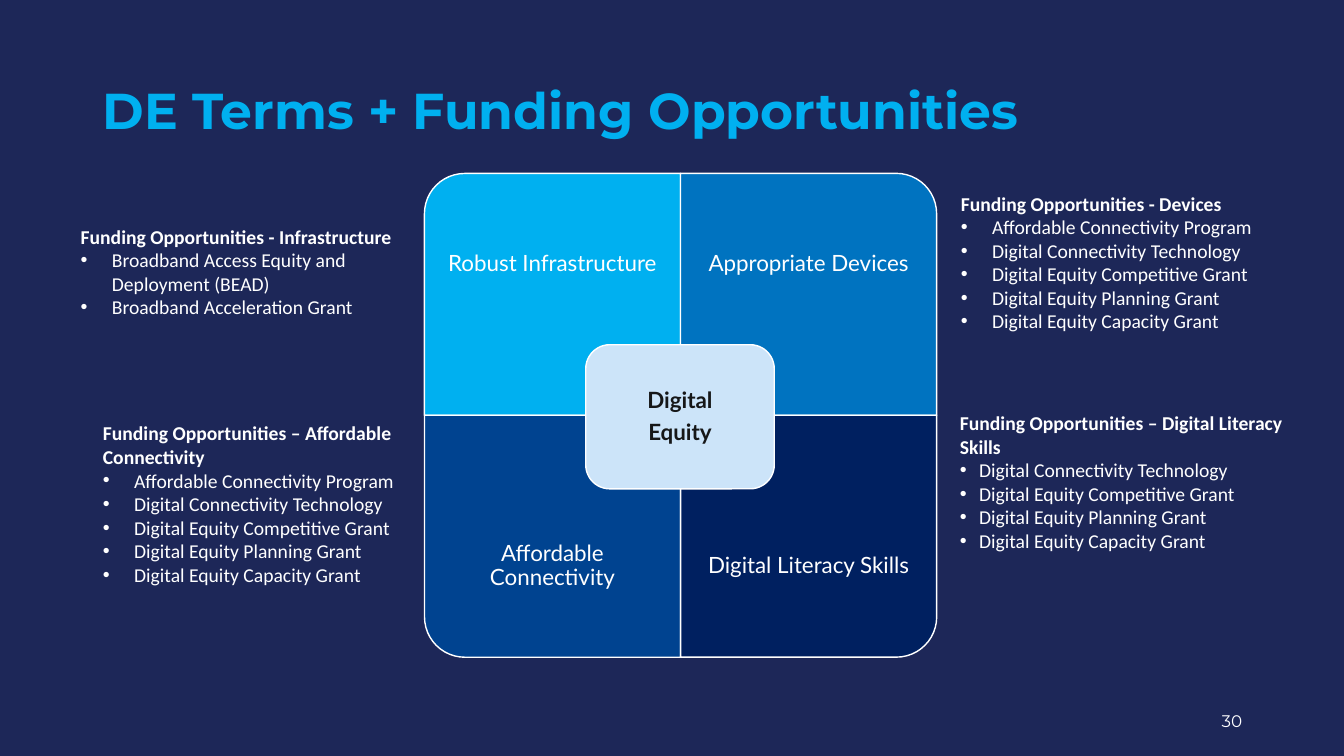
from lxml import etree
from pptx import Presentation
from pptx import util as u
from pptx.dml.color import RGBColor
from pptx.enum import shapes, text
from pptx.oxml import ns

NAVY = RGBColor(0x1D, 0x27, 0x58)
SKY = RGBColor(0x00, 0xB0, 0xF0)
AZURE = RGBColor(0x00, 0x73, 0xC0)
COBALT = RGBColor(0x00, 0x43, 0x90)
MIDNIGHT = RGBColor(0x00, 0x20, 0x60)
ICE = RGBColor(0xCC, 0xE4, 0xF9)
INK = RGBColor(0x16, 0x17, 0x18)
WHITE = RGBColor(0xFF, 0xFF, 0xFF)

PX = 9144
COMPARISON_LAYOUT = 4
CENTER_X, CENTER_Y = 675, 412
QUADRANT_W, QUADRANT_H, LABEL_H = 254, 240, 180

CONNECTIVITY = "Digital Connectivity Technology"
GRANTS = [f"Digital Equity {kind} Grant" for kind in ("Competitive", "Planning", "Capacity")]
AFFORDABLE = "Affordable Connectivity Program"

QUADRANTS = [
    ("Robust Infrastructure", SKY, 0, 0, 270),
    ("Appropriate Devices", AZURE, 1, 0, 0),
    ("Affordable Connectivity", COBALT, 0, 1, 180),
    ("Digital Literacy Skills", MIDNIGHT, 1, 1, 90),
]
FUNDING = [
    ("Infrastructure", "-", (70, 218, 337, 128), 31,
     ["Broadband Access Equity and Deployment (BEAD)", "Broadband Acceleration Grant"]),
    ("Affordable Connectivity", "–", (92, 413, 377, 269), 31, [AFFORDABLE, CONNECTIVITY, *GRANTS]),
    ("Devices", "-", (943, 185, 377, 199), 31, [AFFORDABLE, CONNECTIVITY, *GRANTS]),
    ("Digital Literacy Skills", "–", (942, 403, 377, 175), 19, [CONNECTIVITY, *GRANTS]),
]


class Deck:
    """Holds the style and the current slide, and draws each kind of element."""

    TITLE = dict(name="Montserrat", size=u.Pt(36), bold=True)
    NUMBER = dict(name="Montserrat", size=u.Pt(12), bold=False)
    LABEL = dict(name="Lato", size=u.Pt(16), bold=False)
    HUB = dict(LABEL, bold=True)
    HEADING = dict(name="Calibri", size=u.Pt(14), bold=True)
    ITEM = dict(HEADING, bold=False)
    LEFT = dict(alignment=text.PP_ALIGN.LEFT, line_spacing=1.0, space_before=u.Pt(0))
    TIGHT = dict(LEFT, line_spacing=0.9)
    CENTERED = dict(TIGHT, alignment=text.PP_ALIGN.CENTER, space_after=u.Pt(5.6))
    RIGHT = dict(LEFT, alignment=text.PP_ALIGN.RIGHT)

    def __init__(self):
        self.deck = Presentation()
        self.deck.slide_width, self.deck.slide_height = 1333 * PX, 750 * PX
        self.slide = self.deck.slides.add_slide(self.deck.slide_layouts[COMPARISON_LAYOUT])
        self.slide.background.fill.solid()
        self.slide.background.fill.fore_color.rgb = NAVY

    def apply(self, target, values):
        for key, value in values.items():
            setattr(target, key, value)

    def place(self, holder, box):
        self.apply(holder, dict(zip(("left", "top", "width", "height"), (n * PX for n in box))))

    def frame(self, holder, anchor, inset=None):
        frame = holder.text_frame
        self.apply(frame, dict(word_wrap=True, auto_size=text.MSO_AUTO_SIZE.NONE,
                               vertical_anchor=anchor))
        if inset:
            sides = ("margin_left", "margin_top", "margin_right", "margin_bottom")
            self.apply(frame, dict.fromkeys(sides, inset * PX))
        return frame

    def fill_frame(self, frame, lines, font, layout, color=WHITE):
        for index, line in enumerate(lines):
            paragraph = frame.add_paragraph() if index else frame.paragraphs[0]
            self.fill_paragraph(paragraph, line, font, layout, color)

    def fill_paragraph(self, paragraph, line, font, layout, color=WHITE):
        self.apply(paragraph, layout)
        run = paragraph.add_run()
        run.text = line
        self.apply(run.font, font)
        run.font.color.rgb = color

    def bullet(self, paragraph, indent=0):
        properties = paragraph._p.get_or_add_pPr()
        properties.set("marL", str(indent * PX))
        properties.set("indent", str(-indent * PX))
        if indent:
            etree.SubElement(properties, ns.qn("a:buFont"), typeface="Arial")
            etree.SubElement(properties, ns.qn("a:buChar"), char="•")
        else:
            etree.SubElement(properties, ns.qn("a:buNone"))

    def title(self, words, box):
        holder = self.slide.shapes.title
        self.place(holder, box)
        frame = self.frame(holder, text.MSO_ANCHOR.MIDDLE)
        self.fill_frame(frame, [words], self.TITLE, self.TIGHT, SKY)

    def bullets(self, position, heading, box, indent, items):
        holder = self.slide.placeholders[position]
        self.place(holder, box)
        frame = self.frame(holder, text.MSO_ANCHOR.TOP)
        frame.auto_size = text.MSO_AUTO_SIZE.SHAPE_TO_FIT_TEXT
        self.bullet(frame.paragraphs[0])
        self.fill_paragraph(frame.paragraphs[0], heading, self.HEADING, self.LEFT)
        for item in items:
            paragraph = frame.add_paragraph()
            self.bullet(paragraph, indent)
            self.fill_paragraph(paragraph, item, self.ITEM, self.LEFT)

    def label(self, words, box, font, layout, inset=None):
        holder = self.slide.shapes.add_textbox(*(n * PX for n in box))
        frame = self.frame(holder, text.MSO_ANCHOR.MIDDLE, inset)
        self.fill_frame(frame, [words], font, layout)

    def panel(self, preset, box, fill, rotation=0):
        panel = self.slide.shapes.add_shape(preset, *(n * PX for n in box))
        panel.shadow.inherit = False
        panel.fill.solid()
        panel.fill.fore_color.rgb = fill
        panel.line.color.rgb = WHITE
        panel.line.width = u.Pt(1)
        panel.rotation = rotation
        return panel

    def quadrant(self, words, fill, column, row, rotation):
        left = CENTER_X + (column - 1) * QUADRANT_W
        top = CENTER_Y + (row - 1) * QUADRANT_H
        box = (left, top, QUADRANT_W, QUADRANT_H)
        if rotation % 180:
            shift = (QUADRANT_W - QUADRANT_H) // 2
            box = (left + shift, top - shift, QUADRANT_H, QUADRANT_W)
        self.panel(shapes.MSO_SHAPE.ROUND_1_RECTANGLE, box, fill, rotation)
        label_top = top + row * (QUADRANT_H - LABEL_H)
        self.label(words, (left, label_top, QUADRANT_W, LABEL_H), self.LABEL, self.CENTERED, 12)

    def hub(self, lines, box):
        hub = self.panel(shapes.MSO_SHAPE.ROUNDED_RECTANGLE, box, ICE)
        frame = self.frame(hub, text.MSO_ANCHOR.MIDDLE, 7)
        self.fill_frame(frame, lines, self.HUB, self.CENTERED, INK)


def main():
    deck = Deck()
    deck.title("DE Terms + Funding Opportunities", (92, 40, 1150, 145))
    for position, (topic, dash, box, indent, items) in enumerate(FUNDING, 1):
        deck.bullets(position, f"Funding Opportunities {dash} {topic}", box, indent, items)
    for quadrant in QUADRANTS:
        deck.quadrant(*quadrant)
    deck.hub(["Digital", "Equity"], (581, 342, 187, 143))
    deck.label("30", (942, 695, 300, 40), deck.NUMBER, deck.RIGHT)
    deck.deck.save("out.pptx")


if __name__ == "__main__":
    main()
